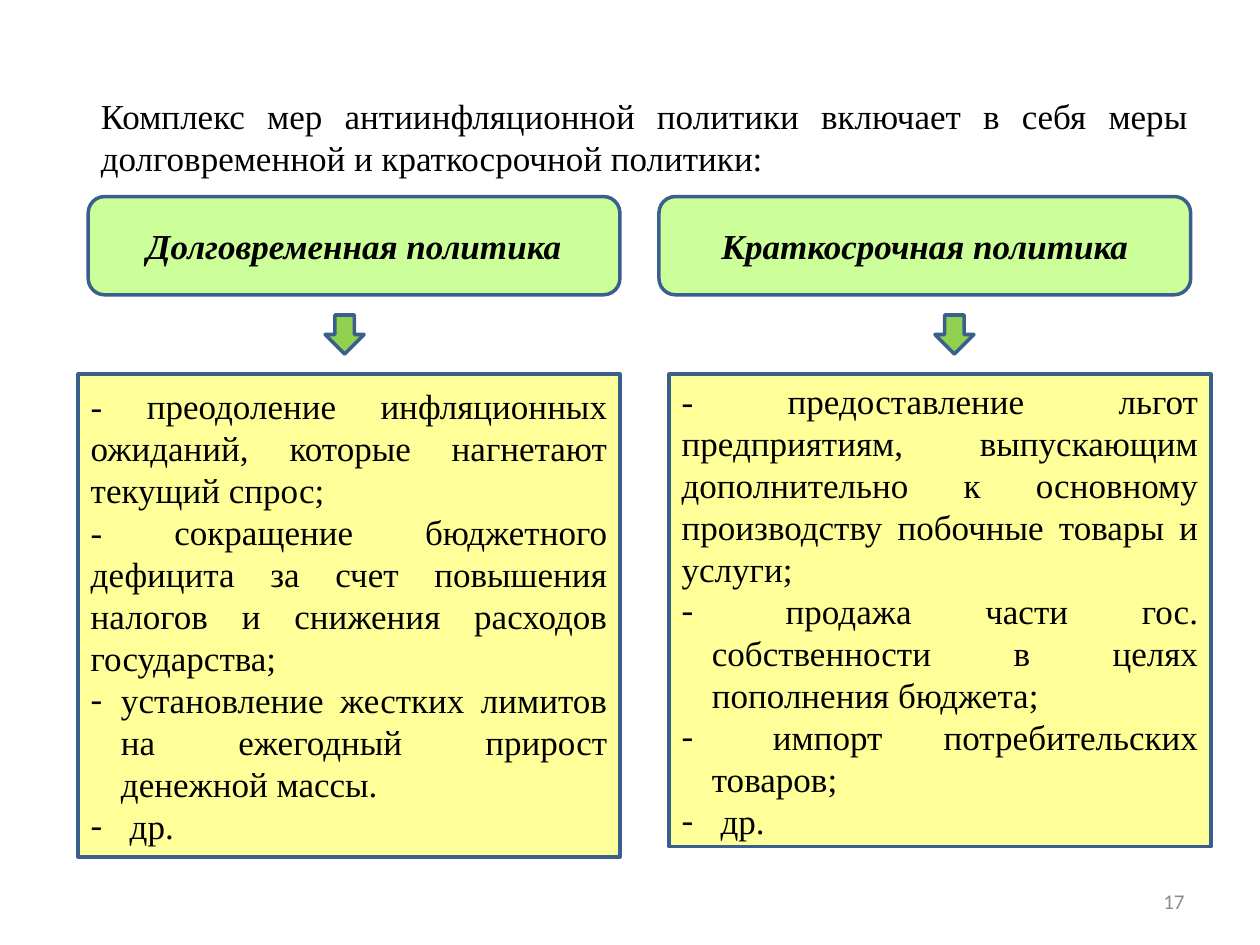
from dataclasses import dataclass
from typing import Any

from lxml.etree import SubElement
from pptx import Presentation
from pptx.dml.color import RGBColor
from pptx.enum.shapes import MSO_SHAPE
from pptx.enum.text import MSO_ANCHOR, MSO_AUTO_SIZE, PP_ALIGN
from pptx.oxml.ns import qn
from pptx.util import Inches, Pt

BLACK = RGBColor(0x00, 0x00, 0x00)
GRAY = RGBColor(0x8C, 0x8C, 0x8C)
OUTLINE = RGBColor(0x3A, 0x5F, 0x8C)
HEADING_GREEN = RGBColor(0xCC, 0xFF, 0x99)
ARROW_GREEN = RGBColor(0x92, 0xD0, 0x50)
MEASURES_YELLOW = RGBColor(0xFF, 0xFF, 0x99)
SERIF = "Times New Roman"
BODY_FONT = {"name": SERIF, "size": Pt(20), "bold": False}
HEADING_FONT = {"name": SERIF, "size": Pt(20), "bold": True, "italic": True}
NUMBER_FONT = {"name": "Calibri", "size": Pt(12)}
BULLET_INDENT = Inches(0.24)


@dataclass(frozen=True)
class Measure:
    text: str
    bulleted: bool = True


@dataclass(frozen=True)
class Policy:
    heading: str
    heading_left: float
    arrow_left: float
    measures_left: float
    measures_height: float
    measures: tuple[Measure, ...]


POLICIES = (
    Policy("Долговременная политика", 0.7, 2.58, 0.62, 3.83, (
        Measure("- преодоление инфляционных ожиданий, которые нагнетают текущий спрос;", False),
        Measure("- сокращение бюджетного дефицита за счет повышения налогов и снижения "
                "расходов государства;", False),
        Measure("установление жестких лимитов на ежегодный прирост денежной массы."),
        Measure(" др."),
    )),
    Policy("Краткосрочная политика", 5.23, 7.42, 5.31, 3.75, (
        Measure("- предоставление льгот предприятиям, выпускающим дополнительно к основному "
                "производству побочные товары и услуги;", False),
        Measure(" продажа части гос. собственности в целях пополнения бюджета;"),
        Measure(" импорт потребительских товаров;"),
        Measure(" др."),
    )),
)


def apply_format(target: Any, values: dict[str, Any]) -> None:
    for attribute, value in values.items():
        setattr(target, attribute, value)


def place(part: Any, left: float, top: float, width: float, height: float) -> None:
    apply_format(part, {"left": Inches(left), "top": Inches(top),
                        "width": Inches(width), "height": Inches(height)})


def paint(part: Any, fill: RGBColor) -> None:
    part.fill.solid()
    part.fill.fore_color.rgb = fill
    part.line.color.rgb = OUTLINE
    part.line.width = Pt(2)


def frame_text(part: Any, anchor: MSO_ANCHOR) -> Any:
    apply_format(part.text_frame, {"word_wrap": True, "vertical_anchor": anchor,
                                   "auto_size": MSO_AUTO_SIZE.NONE})
    return part.text_frame


def write(paragraph: Any, text: str, font: dict[str, Any], align: PP_ALIGN,
          color: RGBColor = BLACK) -> None:
    apply_format(paragraph, {"alignment": align, "space_before": Pt(0)})
    run = paragraph.add_run()
    run.text = text
    apply_format(run.font, font)
    run.font.color.rgb = color


def set_bullet(paragraph: Any, bulleted: bool) -> None:
    properties = paragraph._p.get_or_add_pPr()
    indent = BULLET_INDENT if bulleted else 0
    properties.set("marL", str(indent))
    properties.set("indent", str(-indent))
    if bulleted:
        SubElement(properties, qn("a:buFont"), typeface=SERIF)
        SubElement(properties, qn("a:buChar"), char="-")
    else:
        SubElement(properties, qn("a:buNone"))


def add_preset(slide: Any, preset: MSO_SHAPE, left: float, top: float,
               width: float, height: float, fill: RGBColor) -> Any:
    preset_shape = slide.shapes.add_shape(
        preset, Inches(left), Inches(top), Inches(width), Inches(height))
    preset_shape.shadow.inherit = False
    paint(preset_shape, fill)
    return preset_shape


def draw_policy(slide: Any, policy: Policy, measures_box: Any) -> None:
    heading = add_preset(slide, MSO_SHAPE.ROUNDED_RECTANGLE, policy.heading_left,
                         1.56, 4.22, 0.78, HEADING_GREEN)
    write(frame_text(heading, MSO_ANCHOR.MIDDLE).paragraphs[0],
          policy.heading, HEADING_FONT, PP_ALIGN.CENTER)
    add_preset(slide, MSO_SHAPE.DOWN_ARROW, policy.arrow_left, 2.5, 0.31, 0.31, ARROW_GREEN)

    place(measures_box, policy.measures_left, 2.97, 4.3, policy.measures_height)
    paint(measures_box, MEASURES_YELLOW)
    frame = frame_text(measures_box, MSO_ANCHOR.MIDDLE)
    for position, measure in enumerate(policy.measures):
        paragraph = frame.add_paragraph() if position else frame.paragraphs[0]
        write(paragraph, measure.text, BODY_FONT, PP_ALIGN.JUSTIFY)
        set_bullet(paragraph, measure.bulleted)


def main() -> None:
    presentation = Presentation()
    apply_format(presentation, {"slide_width": Inches(10), "slide_height": Inches(7.5)})
    slide = presentation.slides.add_slide(presentation.slide_layouts[3])

    introduction = slide.shapes.title
    place(introduction, 0.7, 0.7, 8.83, 0.77)
    write(frame_text(introduction, MSO_ANCHOR.TOP).paragraphs[0],
          "Комплекс мер антиинфляционной политики включает в себя меры "
          "долговременной и краткосрочной политики:", BODY_FONT, PP_ALIGN.JUSTIFY)

    for position, policy in enumerate(POLICIES, start=1):
        draw_policy(slide, policy, slide.placeholders[position])

    page_number = slide.shapes.add_textbox(
        Inches(7.17), Inches(6.95), Inches(2.33), Inches(0.4))
    write(frame_text(page_number, MSO_ANCHOR.MIDDLE).paragraphs[0],
          "17", NUMBER_FONT, PP_ALIGN.RIGHT, GRAY)

    presentation.save("out.pptx")


if __name__ == "__main__":
    main()
